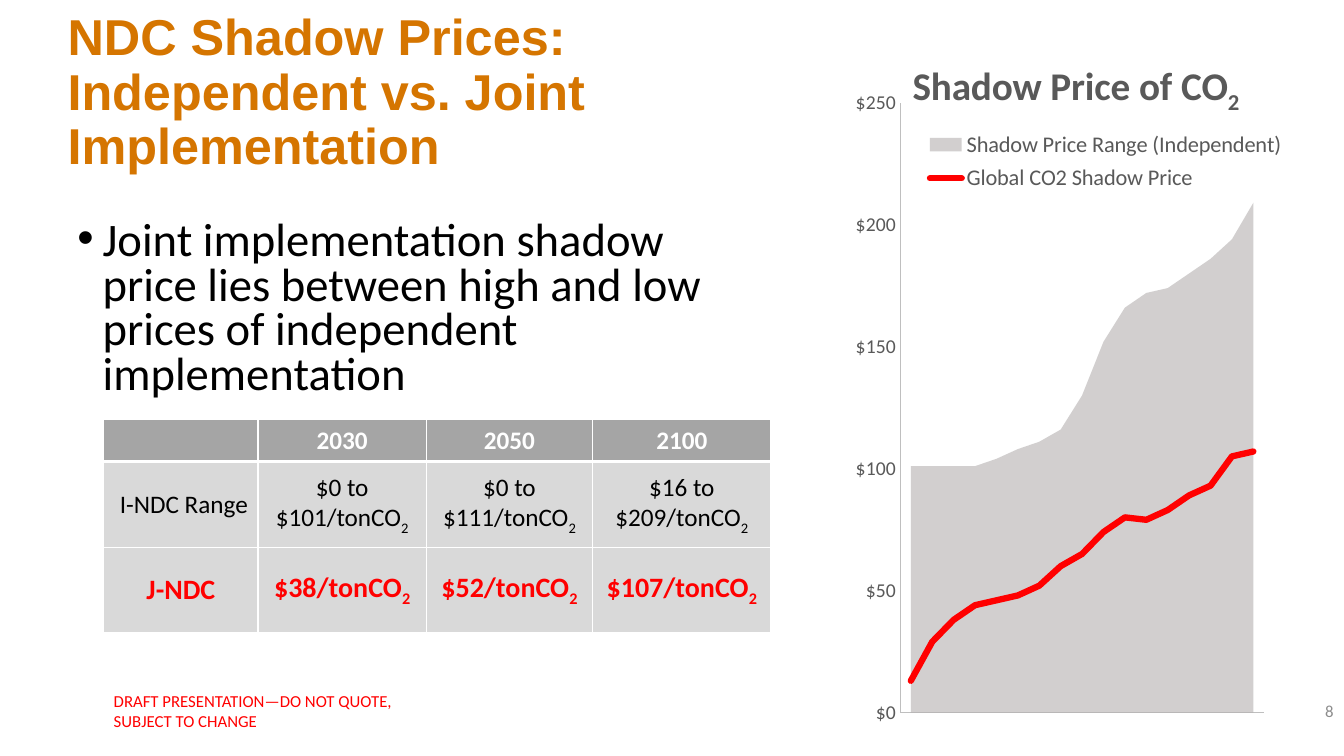
from lxml.etree import SubElement
from pptx import Presentation
from pptx.chart.data import CategoryChartData
from pptx.dml.color import RGBColor
from pptx.enum.chart import XL_CHART_TYPE as CT, XL_LEGEND_POSITION as LP
from pptx.enum.chart import XL_MARKER_STYLE as MS, XL_TICK_LABEL_POSITION as TL, XL_TICK_MARK as TM
from pptx.enum.text import MSO_ANCHOR as VA, PP_ALIGN as AL
from pptx.oxml import parse_xml
from pptx.oxml.ns import nsdecls, qn
from pptx.util import Pt


def rgb(code):
    return RGBColor.from_string(code)


def apply(obj, fmt):
    for key, value in fmt.items():
        setattr(obj, key, value)


class Deck:
    """Holds the slide style and draws each kind of element on the current slide."""

    font = "Calibri"
    orange, red, gray, axis_gray, white = "D57500", "FF0000", "595959", "BFBFBF", "FFFFFF"

    def __init__(self, width, height):
        self.prs = Presentation()
        apply(self.prs, {"slide_width": Pt(width), "slide_height": Pt(height)})
        self.s = self.prs.slides.add_slide(self.prs.slide_layouts[6])

    def style(self, font, size, color, **fmt):
        apply(font, {"name": self.font, "size": Pt(size), "bold": False, **fmt})
        font.color.rgb = rgb(color)

    def runs(self, p, text, size, color, **fmt):
        for i, part in enumerate(text.split("_")):
            pieces = (part[:1], part[1:]) if i else ("", part)
            for piece, base in zip(pieces, ("-25000", "0")):
                if piece:
                    r = p.add_run()
                    r.text = piece
                    self.style(r.font, size, color, **fmt)
                    r._r.get_or_add_rPr().set("baseline", base)

    def text(self, box, text, size, color, frame=None, para=None, bullet=0, **fmt):
        sp = self.s.shapes.add_textbox(*map(Pt, box))
        tf = sp.text_frame
        apply(tf, {"word_wrap": True, "vertical_anchor": VA.MIDDLE, **(frame or {})})
        p = tf.paragraphs[0]
        apply(p, para or {})
        self.runs(p, text, size, color, **fmt)
        if bullet:
            pPr = p._p.get_or_add_pPr()
            for key, value in {"marL": bullet, "indent": -bullet}.items():
                pPr.set(key, str(Pt(value)))
            SubElement(pPr, qn("a:buFont")).set("typeface", "Arial")
            SubElement(pPr, qn("a:buChar")).set("char", "•")

    def cell(self, cell, text, size, color, fill, bold, anchor, align, bottom):
        cell.vertical_anchor = anchor
        for i, line in enumerate(text.split("\n")):
            p = cell.text_frame.paragraphs[0] if i == 0 else cell.text_frame.add_paragraph()
            p.alignment = align
            self.runs(p, line, size, color, bold=bold)
        tcPr = cell._tc.get_or_add_tcPr()
        for side in "LRTB":
            width = bottom if side == "B" else 1
            tcPr.append(parse_xml(
                f'<a:ln{side} {nsdecls("a")} w="{Pt(width)}"><a:solidFill>'
                f'<a:srgbClr val="{self.white}"/></a:solidFill></a:ln{side}>'))
        cell.fill.solid()
        cell.fill.fore_color.rgb = rgb(fill)

    def table(self, left, top, widths, heights, rows, styles):
        box = map(Pt, (left, top, sum(widths), sum(heights)))
        tbl = self.s.shapes.add_table(len(rows), len(widths), *box).table
        for col, width in zip(tbl.columns, widths):
            col.width = Pt(width)
        for row, height in zip(tbl.rows, heights):
            row.height = Pt(height)
        for i, (row, fmt) in enumerate(zip(rows, styles)):
            for j, text in enumerate(row):
                align = AL.RIGHT if (i, j) == (1, 0) else AL.CENTER
                self.cell(tbl.cell(i, j), text, align=align, **fmt)

    def place(self, parent, index, target, **frame):
        for old in parent.findall(qn("c:layout")):
            parent.remove(old)
        layout = parse_xml(f'<c:layout {nsdecls("c")}><c:manualLayout/></c:layout>')
        parent.insert(index, layout)
        if target:
            SubElement(layout[0], qn("c:layoutTarget")).set("val", target)
        for key in "xy":
            SubElement(layout[0], qn(f"c:{key}Mode")).set("val", "edge")
        for key, value in frame.items():
            SubElement(layout[0], qn(f"c:{key}")).set("val", str(value))

    def chart(self, box, title, cats, series):
        data = CategoryChartData()
        data.categories = cats
        for name, values in series:
            data.add_series(name, values)
        chart = self.s.shapes.add_chart(CT.AREA, *map(Pt, box), data).chart
        self.style(chart.font, 14, self.gray)
        area = chart.plots[0]._element
        line = parse_xml(f'<c:lineChart {nsdecls("c")}><c:grouping val="standard"/>'
                         '<c:varyColors val="0"/><c:marker val="1"/></c:lineChart>')
        line.insert(2, area.findall(qn("c:ser"))[1])
        for ax in area.findall(qn("c:axId")):
            SubElement(line, qn("c:axId")).set("val", ax.get("val"))
        area.addnext(line)
        chart.plots[0].vary_by_categories = False

        band, price = (plot.series[0] for plot in chart.plots)
        band.format.fill.solid()
        band.format.fill.fore_color.rgb = rgb("AFABAB")
        clr = next(band._element.iter(qn("a:srgbClr")))
        SubElement(clr, qn("a:alpha")).set("val", "56000")
        price.smooth = False
        price.marker.style = MS.NONE
        price.format.line.width = Pt(4.5)
        price.format.line.color.rgb = rgb(self.red)
        next(price._element.iter(qn("a:ln"))).set("cap", "rnd")

        cat, val = chart.category_axis, chart.value_axis
        for axis in (cat, val):
            apply(axis, {"major_tick_mark": TM.NONE, "minor_tick_mark": TM.NONE,
                         "has_major_gridlines": False})
            axis.format.line.width = Pt(0.75)
            axis.format.line.color.rgb = rgb(self.axis_gray)
            self.style(axis.tick_labels.font, 14, self.gray)
        cat.tick_label_position = TL.NONE
        apply(val, {"minimum_scale": 0, "maximum_scale": 250, "major_unit": 50})
        apply(val.tick_labels, {"number_format": '"$"#,##0', "number_format_is_linked": False})
        val._element.find(qn("c:crossBetween")).set("val", "between")

        chart.has_title = chart.has_legend = True
        self.runs(chart.chart_title.text_frame.paragraphs[0], title, 28, self.gray, bold=True)
        apply(chart.legend, {"position": LP.RIGHT, "include_in_layout": False})
        self.style(chart.legend.font, 16, self.gray)
        self.place(chart.chart_title._element, 1, None, x=0.15, y=0.04)
        self.place(chart.legend._element, 1, None, x=0.17, y=0.13, w=0.79, h=0.1)
        self.place(area.getparent(), 0, "inner", x=0.13, y=0.1, w=0.77, h=0.83)


def main():
    d = Deck(960, 540)
    flush = dict.fromkeys(("margin_left", "margin_right", "margin_top", "margin_bottom"), 0)
    d.text((48.24, 7.92, 514.8, 118.08),
           "NDC Shadow Prices: Independent vs. Joint Implementation",
           36, d.orange, flush, {"line_spacing": 0.9}, name="Arial", bold=True)
    d.text((74.16, 493.2, 216, 28.8),
           "DRAFT PRESENTATION—DO NOT QUOTE, SUBJECT TO CHANGE", 12, d.red)
    head = dict(size=18, color=d.white, fill="A5A5A5", bold=True, anchor=VA.BOTTOM, bottom=3)
    body = dict(size=18, color="000000", fill="D9D9D9", bold=False, anchor=VA.MIDDLE, bottom=1)
    joint = {**body, "size": 20, "color": d.red, "bold": True}
    d.table(74.16, 299.52, (110.16, 120.24, 118.8, 127.44), (30.24, 61.2, 61.2), (
        ("", "2030", "2050", "2100"),
        ("I-NDC Range", "$0 to\n$101/tonCO_2", "$0 to\n$111/tonCO_2", "$16 to\n$209/tonCO_2"),
        ("J-NDC", "$38/tonCO_2", "$52/tonCO_2", "$107/tonCO_2"),
    ), (head, body, joint))
    d.text((48.24, 154.08, 470.16, 146.16),
           "Joint implementation shadow price lies between high and low prices of "
           "independent implementation", 33.3, "000000", {"vertical_anchor": VA.TOP},
           {"line_spacing": 0.8, "space_before": Pt(10)}, bullet=18)
    d.chart((599.04, 20.88, 337.68, 524.88), "Shadow Price of CO_2",
            [str(year) for year in range(2020, 2101, 5)], (
        ("Shadow Price Range (Independent)",
         (101, 101, 101, 101, 104, 108, 111, 116, 130, 152, 166, 172, 174, 180, 186, 194, 209)),
        ("Global CO2 Shadow Price",
         (13, 29, 38, 44, 46, 48, 52, 60, 65, 74, 80, 79, 83, 89, 93, 105, 107)),
    ))
    d.text((743.76, 493.2, 216, 28.8), "8", 12, "8C8C8C", para={"alignment": AL.RIGHT})
    d.prs.save("out.pptx")


if __name__ == "__main__":
    main()
